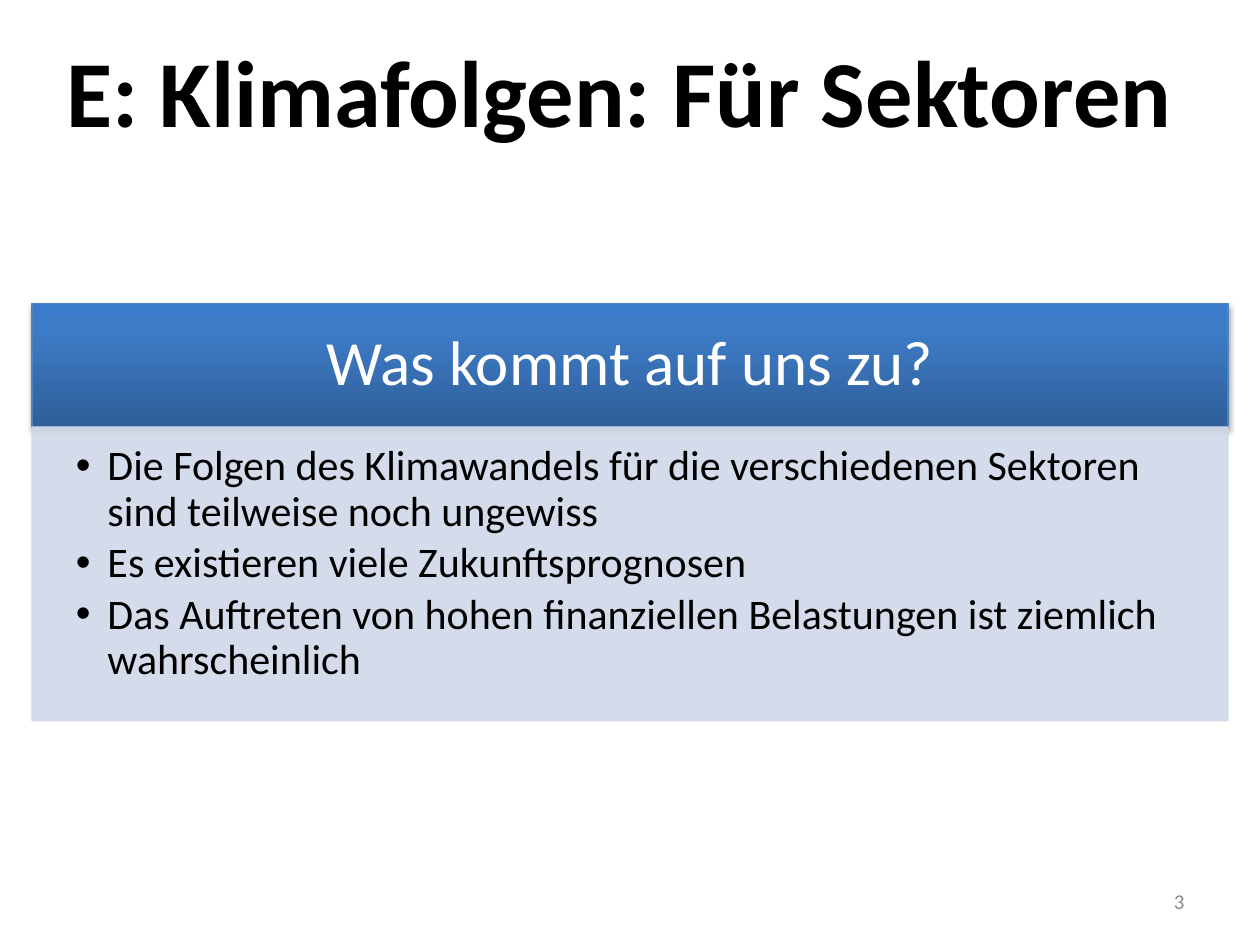
from dataclasses import dataclass

from lxml.etree import SubElement
from pptx import Presentation
from pptx.dml.color import RGBColor
from pptx.enum.shapes import MSO_SHAPE as Shape
from pptx.enum.text import MSO_ANCHOR as Anchor, PP_ALIGN as Align
from pptx.oxml.ns import qn
from pptx.util import Pt

TITLE = "E: Klimafolgen: Für Sektoren "
QUESTION = "Was kommt auf uns zu?"
POINTS = [
    "Die Folgen des Klimawandels für die verschiedenen Sektoren sind teilweise noch ungewiss",
    "Es existieren viele Zukunftsprognosen",
    "Das Auftreten von hohen finanziellen Belastungen ist ziemlich wahrscheinlich",
]
PAGE = "3"


@dataclass(frozen=True)
class Theme:
    font: str = "Calibri"
    black: str = "000000"
    white: str = "FFFFFF"
    grey: str = "8C8C8C"
    header_line: str = "4F81BD"
    header_stops: tuple = ((0, "2F5F99"), (80, "3D7CC7"), (100, "3A7CCB"))
    panel: str = "D0D8E8"
    panel_opacity: int = 90
    title_size: int = 54
    header_size: int = 36
    body_size: int = 24
    page_size: int = 12


THEME = Theme()
SLIDE_W, SLIDE_H = 720, 540
BLOCK_X, BLOCK_W = 18.25, 683.5
HEADER_Y, HEADER_H = 173.4, 70.6
PANEL_H = 167.9
BULLET_INDENT = 18


def add_xml(parent, tag, **attributes):
    values = {name: str(value) for name, value in attributes.items()}
    return SubElement(parent, qn(tag), values)


def set_frame(frame, insets, anchor):
    frame.word_wrap = True
    frame.vertical_anchor = anchor
    (frame.margin_left, frame.margin_top,
     frame.margin_right, frame.margin_bottom) = map(Pt, insets)


def write(paragraph, text, size, color, align, bold=False):
    paragraph.alignment = align
    run = paragraph.add_run()
    run.text = text
    run.font.name, run.font.size, run.font.bold = THEME.font, Pt(size), bold
    run.font.color.rgb = RGBColor.from_string(color)


def add_block(slide, top, height, line_color):
    block = slide.shapes.add_shape(
        Shape.RECTANGLE, Pt(BLOCK_X), Pt(top), Pt(BLOCK_W), Pt(height))
    block.line.color.rgb = RGBColor.from_string(line_color)
    block.line.width = Pt(0.75)
    block.shadow.inherit = False
    return block


def fill_gradient(shape, stops):
    """Fill from bottom to top with (percent, colour) stops."""
    shape.fill.gradient()
    shape.fill.gradient_angle = 90
    stop_list = shape.element.spPr.find(".//" + qn("a:gsLst"))
    for old_stop in list(stop_list):
        stop_list.remove(old_stop)
    for percent, color in stops:
        stop = add_xml(stop_list, "a:gs", pos=percent * 1000)
        add_xml(stop, "a:srgbClr", val=color)


def add_shadow(shape):
    effects = shape.element.spPr.find(qn("a:effectLst"))
    shadow = add_xml(effects, "a:outerShdw", blurRad=Pt(3.1), dist=Pt(1.8),
                     dir=90 * 60000, rotWithShape=0)
    color = add_xml(shadow, "a:srgbClr", val=THEME.black)
    add_xml(color, "a:alpha", val=35000)


def add_bullet(paragraph):
    properties = paragraph._p.get_or_add_pPr()
    properties.set("marL", str(Pt(BULLET_INDENT)))
    properties.set("indent", str(Pt(-BULLET_INDENT)))
    add_xml(properties, "a:buFont", typeface="Arial")
    add_xml(properties, "a:buChar", char="•")


def add_title(slide):
    title = slide.shapes.title
    title.left, title.top, title.width, title.height = map(Pt, (0, 15, SLIDE_W, 94.5))
    set_frame(title.text_frame, (7.2, 3.6, 7.2, 3.6), Anchor.TOP)
    write(title.text_frame.paragraphs[0], TITLE, THEME.title_size,
          THEME.black, Align.CENTER, bold=True)


def add_header(slide):
    header = add_block(slide, HEADER_Y, HEADER_H, THEME.header_line)
    fill_gradient(header, THEME.header_stops)
    add_shadow(header)
    set_frame(header.text_frame, (20, 11.5, 20, 11.5), Anchor.MIDDLE)
    question = header.text_frame.paragraphs[0]
    question.line_spacing = 0.9
    write(question, QUESTION, THEME.header_size, THEME.white, Align.CENTER)


def add_panel(slide):
    panel = add_block(slide, HEADER_Y + HEADER_H, PANEL_H, THEME.panel)
    panel.fill.solid()
    panel.fill.fore_color.rgb = RGBColor.from_string(THEME.panel)
    for color in panel.element.spPr.iter(qn("a:srgbClr")):
        add_xml(color, "a:alpha", val=THEME.panel_opacity * 1000)
    frame = panel.text_frame
    set_frame(frame, (25.2, 10, 13.7, 15), Anchor.TOP)
    for index, point in enumerate(POINTS):
        paragraph = frame.add_paragraph() if index else frame.paragraphs[0]
        paragraph.level = 1
        paragraph.line_spacing = 0.9
        paragraph.space_after = Pt(0.15 * THEME.body_size)
        add_bullet(paragraph)
        write(paragraph, point, THEME.body_size, THEME.black, Align.LEFT)


def add_page_number(slide):
    page = slide.shapes.add_textbox(Pt(516), Pt(500.5), Pt(168), Pt(28.75))
    set_frame(page.text_frame, (7.2, 3.6, 7.2, 3.6), Anchor.MIDDLE)
    write(page.text_frame.paragraphs[0], PAGE, THEME.page_size,
          THEME.grey, Align.RIGHT)


def main():
    deck = Presentation()
    deck.slide_width, deck.slide_height = Pt(SLIDE_W), Pt(SLIDE_H)
    slide = deck.slides.add_slide(deck.slide_layouts[5])
    add_title(slide)
    add_header(slide)
    add_panel(slide)
    add_page_number(slide)
    deck.save("out.pptx")


if __name__ == "__main__":
    main()
